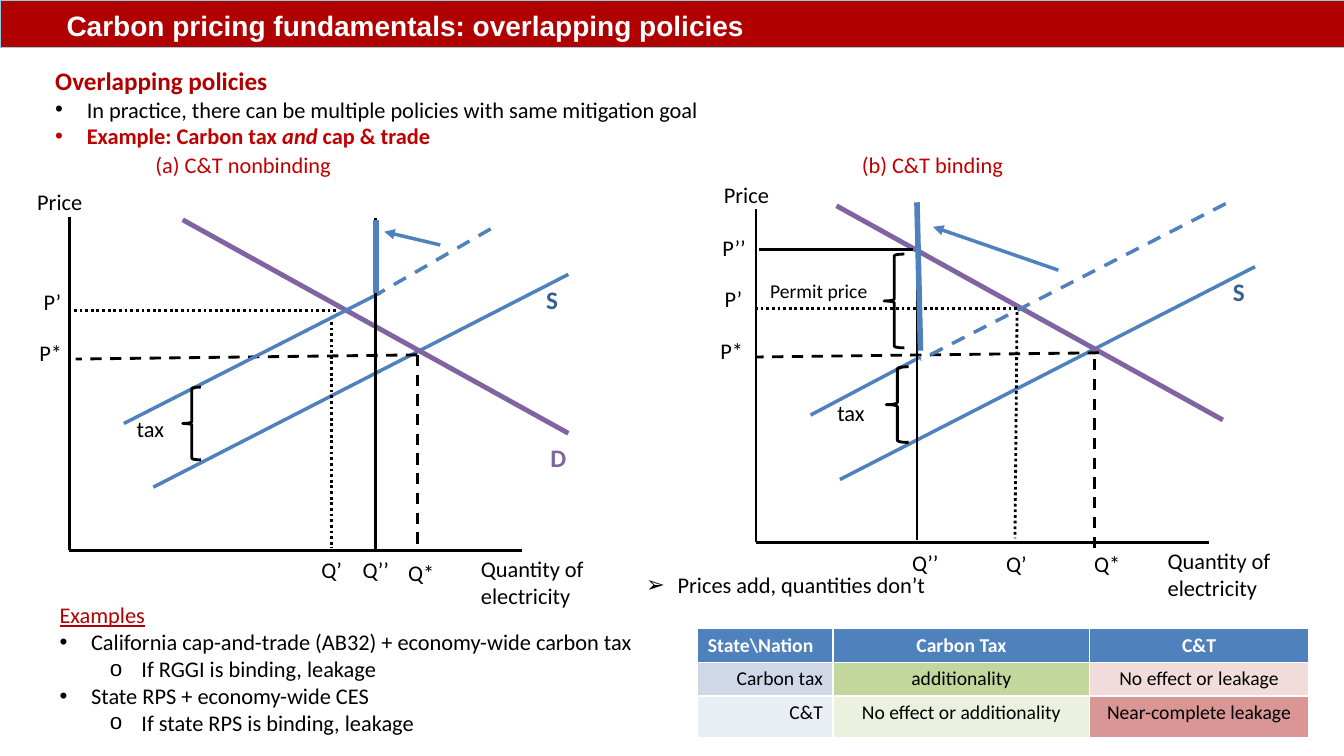
from lxml import etree
from pptx import Presentation
from pptx.dml.color import RGBColor
from pptx.enum.dml import MSO_LINE
from pptx.enum.shapes import MSO_CONNECTOR, MSO_SHAPE
from pptx.enum.text import MSO_ANCHOR, MSO_AUTO_SIZE, PP_ALIGN
from pptx.oxml.ns import qn
from pptx.util import Pt

STRAIGHT = MSO_CONNECTOR.STRAIGHT
LEFT_BRACE = MSO_SHAPE.LEFT_BRACE
DASH, DOT = MSO_LINE.DASH, MSO_LINE.ROUND_DOT
LEFT, CENTER, RIGHT = PP_ALIGN.LEFT, PP_ALIGN.CENTER, PP_ALIGN.RIGHT
TITLE_ONLY = 5

BLACK, WHITE = "000000", "FFFFFF"
RED, BRIGHT_RED = "B00000", "C00000"
BLUE, DARK_BLUE, PURPLE = "4F81BD", "376092", "8064A2"


def color(hex_code):
    return RGBColor.from_string(hex_code)


class Slide:
    font = "Calibri"
    size = 16

    def __init__(self, deck):
        self.page = deck.slides.add_slide(deck.slide_layouts[TITLE_ONLY])
        self.shapes = self.page.shapes

    def span(self, para, text, ink=BLACK, size=None, bold=False, italic=False,
             underline=False, font=None):
        run = para.add_run()
        run.text = text
        run.font.name = font or self.font
        run.font.size = Pt(size or self.size)
        run.font.bold, run.font.italic = bold, italic
        run.font.underline = underline
        run.font.color.rgb = color(ink)

    def bullet(self, para, mark, indent, ink=BLACK):
        props = para._p.get_or_add_pPr()
        props.set("marL", str(Pt(indent)))
        props.set("indent", str(Pt(-22.5)))
        fill = etree.SubElement(props, qn("a:buClr"))
        etree.SubElement(fill, qn("a:srgbClr"), val=ink)
        etree.SubElement(props, qn("a:buFont"), typeface="Arial")
        etree.SubElement(props, qn("a:buChar"), char=mark)

    def title(self, text, height):
        box = self.shapes.title
        box.left, box.top, box.width, box.height = 0, 0, Pt(960), Pt(height)
        box.fill.solid()
        box.fill.fore_color.rgb = color(RED)
        box.line.color.rgb = color("93CDDD")
        box.line.width = Pt(0.25)
        frame = box.text_frame
        frame.auto_size = MSO_AUTO_SIZE.NONE
        frame.vertical_anchor = MSO_ANCHOR.BOTTOM
        frame.margin_left = Pt(47.5)
        frame.margin_bottom = Pt(3.6)
        para = frame.paragraphs[0]
        para.alignment = LEFT
        self.span(para, text, WHITE, 20, bold=True, font="Arial")

    def text(self, left, top, width, height, paragraphs):
        """Each paragraph is (bullet mark, indent, [(text, style), ...])."""
        box = self.shapes.add_textbox(Pt(left), Pt(top), Pt(width), Pt(height))
        frame = box.text_frame
        frame.word_wrap = True
        for number, (mark, indent, spans) in enumerate(paragraphs):
            para = frame.add_paragraph() if number else frame.paragraphs[0]
            if mark:
                self.bullet(para, mark, indent, spans[0][1].get("ink", BLACK))
            for words, style in spans:
                self.span(para, words, **style)

    def label(self, left, top, words, width=62, height=26.5, **style):
        self.text(left, top, width, height, [(None, 0, [(words, style)])])

    def line(self, x1, y1, x2, y2, ink=BLACK, width=2, dash=None, arrow=False):
        link = self.shapes.add_connector(STRAIGHT, Pt(x1), Pt(y1), Pt(x2), Pt(y2))
        link.line.color.rgb = color(ink)
        link.line.width = Pt(width)
        if dash:
            link.line.dash_style = dash
        if arrow:
            etree.SubElement(link.line._get_or_add_ln(), qn("a:tailEnd"), type="triangle")
        etree.SubElement(link._element.spPr, qn("a:effectLst"))

    def brace(self, left, top, width, height):
        brace = self.shapes.add_shape(LEFT_BRACE, Pt(left), Pt(top), Pt(width), Pt(height))
        brace.shadow.inherit = False
        brace.fill.background()
        brace.line.color.rgb = color(BLACK)
        brace.line.width = Pt(2)

    def table(self, left, top, widths, heights, rows):
        """Each cell is (text, fill, alignment); the first row is the header."""
        table = self.shapes.add_table(len(heights), len(widths), Pt(left), Pt(top),
                                      Pt(sum(widths)), Pt(sum(heights))).table
        for column, width in zip(table.columns, widths):
            column.width = Pt(width)
        for r, (height, cells) in enumerate(zip(heights, rows)):
            table.rows[r].height = Pt(height)
            for c, (words, fill, alignment) in enumerate(cells):
                cell = table.cell(r, c)
                cell.fill.solid()
                cell.fill.fore_color.rgb = color(fill)
                para = cell.text_frame.paragraphs[0]
                para.alignment = alignment
                self.span(para, words, BLACK if r else WHITE, 14, bold=r == 0)

    def market(self, dx, dy):
        """Axes, supply curve and their labels, shared by both panels."""
        self.line(406 + dx, 196 + dy, 109.5 + dx, 348 + dy, BLUE, 2.5)
        self.line(49.5 + dx, 155 + dy, 49.5 + dx, 393 + dy)
        self.line(373 + dx, 393 + dy, 49.5 + dx, 393 + dy)
        self.label(383 + dx, 199.5 + dy, "S", ink=DARK_BLUE, size=18, bold=True)
        self.label(336.5 + dx, 393 + dy, "Quantity of electricity", 108, 46)
        self.label(19.5 + dx, 131 + dy, "Price")


def main():
    deck = Presentation()
    deck.slide_width, deck.slide_height = Pt(960), Pt(540)
    slide = Slide(deck)
    slide.title("Carbon pricing fundamentals: overlapping policies", 34)

    # Introduction
    example = {"ink": BRIGHT_RED, "bold": True}
    slide.text(32.4, 43.2, 700, 68, [
        (None, 0, [("Overlapping policies", {"ink": RED, "size": 18, "bold": True})]),
        ("•", 22.5, [("In practice, there can be multiple policies with same mitigation goal", {})]),
        ("•", 22.5, [("Example: Carbon tax ", example), ("and", {**example, "italic": True}),
                     (" cap & trade", example)]),
    ])

    # Panel (a): cap and trade not binding
    slide.label(104, 104.2, "(a) C&T nonbinding", 180, ink=BRIGHT_RED)
    slide.market(0, 0)
    for curve in [
        (130.5, 157, 406, 309.5, PURPLE, 3.5),
        (298, 253.5, 298, 393, BLACK, 2, DASH),
        (298, 253.5, 54, 256.5, BLACK, 2, DASH),
        (240, 222, 51, 222, BLACK, 2, DOT),
        (237, 226, 237, 391.5, BLACK, 2, DOT),
        (272, 209, 88.5, 302.5, BLUE, 2.5),
        (268.5, 156, 268.5, 394),
        (268.5, 157.5, 268.5, 209, BLUE, 4),
        (350.5, 163.5, 271.5, 209, BLUE, 2.5, DASH),
        (314.5, 175, 274.5, 165.5, BLUE, 2.5, None, True),
    ]:
        slide.line(*curve)
    slide.brace(130.5, 276.5, 13, 52)
    slide.label(386, 312.5, "D", ink=PURPLE, size=18, bold=True)
    for name in [(90.5, 293, "tax"), (284.5, 395.5, "Q*"), (222.5, 394, "Q’"),
                 (252, 394, "Q’’"), (24, 202.5, "P’"), (21, 239, "P*")]:
        slide.label(*name)

    # Panel (b): cap and trade binding
    slide.label(608.5, 104.2, "(b) C&T binding", 180, ink=BRIGHT_RED)
    slide.market(490.5, -5.5)
    for curve in [
        (597.5, 147, 873.5, 300, PURPLE, 3.5),
        (782, 256.5, 782, 396, BLACK, 2, DASH),
        (785, 252, 540.5, 255, BLACK, 2, DASH),
        (657.5, 255, 579, 296.5, BLUE, 2.5),
        (655, 149, 655, 386),
        (652.5, 178.5, 542, 178.5),
        (726.5, 220.5, 538, 220.5, BLACK, 2, DOT),
        (726.5, 223, 725, 384.5, BLACK, 2, DOT),
        (875.5, 145.5, 657.5, 257, BLUE, 2.5, DASH),
        (655, 144.5, 657.5, 250.5, BLUE, 4),
        (756, 193, 666.5, 162, BLUE, 2.5, None, True),
    ]:
        slide.line(*curve)
    slide.brace(631.5, 181.5, 14.5, 67)
    slide.brace(633, 262, 16, 54)
    slide.label(543, 196, "Permit price", 141, size=14)
    for name in [(591, 281.5, "tax"), (774.5, 389.5, "Q*"), (711.5, 389.5, "Q’"),
                 (644.5, 389, "Q’’"), (509, 164, "P’’"), (510.5, 200, "P’"),
                 (507.5, 237.5, "P*")]:
        slide.label(*name)

    # Examples and conclusion
    slide.text(35.5, 426, 443, 104.5, [
        (None, 0, [("Examples", {"ink": RED, "underline": True})]),
        ("•", 22.5, [("California cap-and-trade (AB32) + economy-wide carbon tax", {})]),
        ("o", 58.5, [("If RGGI is binding, leakage", {})]),
        ("•", 22.5, [("State RPS + economy-wide CES", {})]),
        ("o", 58.5, [("If state RPS is binding, leakage", {})]),
    ])
    slide.text(454.5, 404.5, 240.5, 26.5, [("➢", 22.5, [("Prices add, quantities don’t", {})])])

    # Policy interaction table
    slide.table(498.5, 449, [96.5, 183.5, 156], [22.5, 22.5, 29.5], [
        [("State\\Nation", BLUE, LEFT), ("Carbon Tax", BLUE, CENTER), ("C&T", BLUE, CENTER)],
        [("Carbon tax", "D0D8E8", RIGHT), ("additionality", "C3D69B", CENTER),
         ("No effect or leakage", "F2DCDB", CENTER)],
        [("C&T", "E9EDF4", RIGHT), ("No effect or additionality", "EBF1DE", CENTER),
         ("Near-complete leakage", "D99694", CENTER)],
    ])
    deck.save("out.pptx")


if __name__ == "__main__":
    main()
